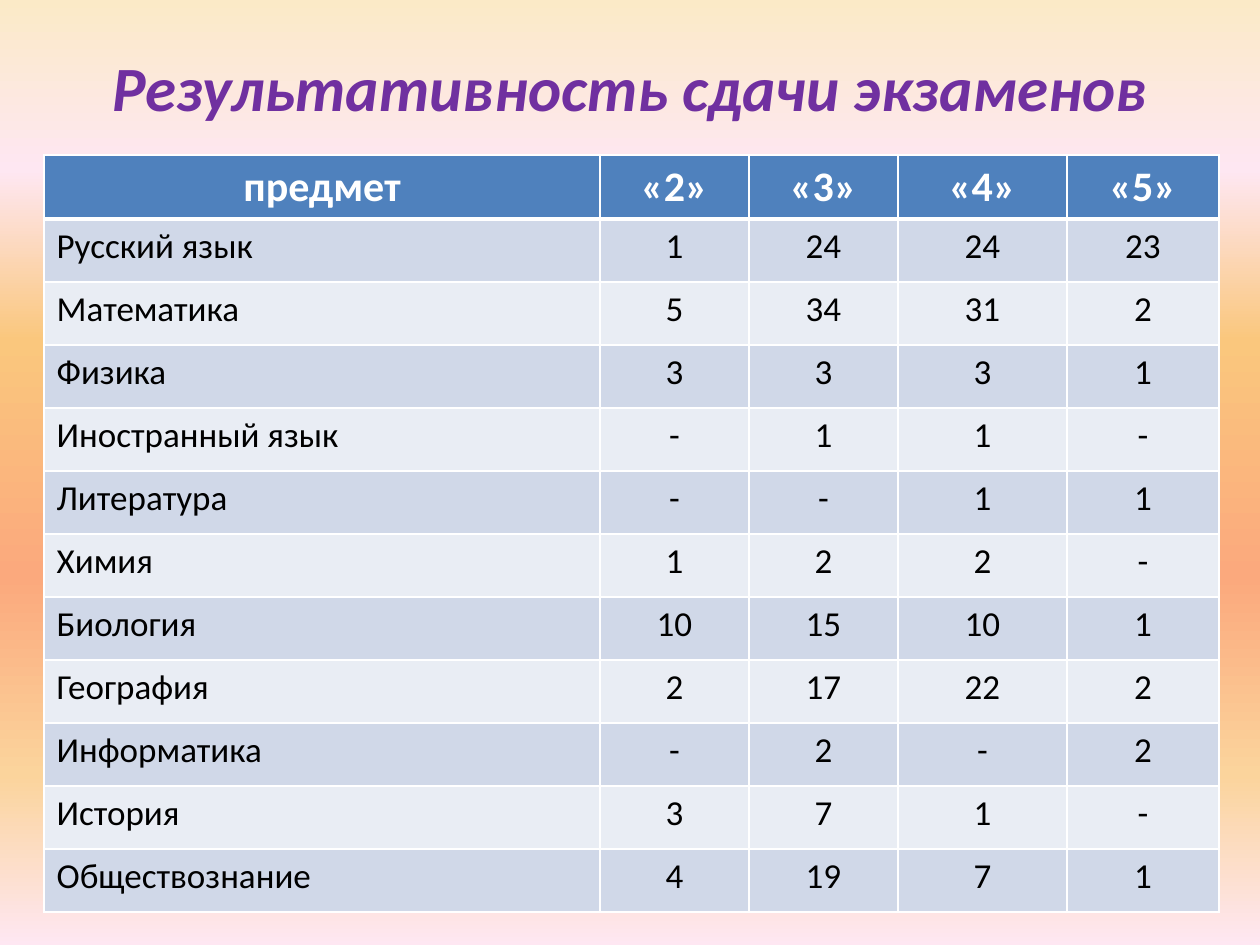
"""Build a slide with a table of exam results by subject."""
from lxml.etree import SubElement
from pptx import Presentation
from pptx.dml.color import RGBColor
from pptx.enum.text import MSO_ANCHOR as Anchor, PP_ALIGN as Align
from pptx.oxml.ns import qn
from pptx.util import Emu, Pt

PURPLE = RGBColor(0x70, 0x30, 0xA0)
WHITE = RGBColor(0xFF, 0xFF, 0xFF)
BLACK = RGBColor(0x00, 0x00, 0x00)
HEADER_BLUE = RGBColor(0x4F, 0x81, 0xBD)
BANDS = [RGBColor(0xD0, 0xD8, 0xE8), RGBColor(0xE9, 0xED, 0xF4)]
CREAM = RGBColor(0xFB, 0xEA, 0xC7)
PINK = RGBColor(0xFE, 0xE7, 0xF2)
AMBER = RGBColor(0xFA, 0xC7, 0x7D)
CORAL = RGBColor(0xFB, 0xA9, 0x7D)
SAND = RGBColor(0xFB, 0xD4, 0x9C)
GRADIENT = [(0, CREAM), (18, PINK), (36, AMBER), (61, CORAL), (82, SAND), (100, PINK)]
FONT = "Calibri"
ROW_HEIGHT = 63
COLUMN_WIDTHS = [556, 149, 149, 169, 152]
RESULTS = [
    ("предмет", "«2»", "«3»", "«4»", "«5»"),
    ("Русский язык", "1", "24", "24", "23"),
    ("Математика", "5", "34", "31", "2"),
    ("Физика", "3", "3", "3", "1"),
    ("Иностранный язык", "-", "1", "1", "-"),
    ("Литература", "-", "-", "1", "1"),
    ("Химия", "1", "2", "2", "-"),
    ("Биология", "10", "15", "10", "1"),
    ("География", "2", "17", "22", "2"),
    ("Информатика", "-", "2", "-", "2"),
    ("История", "3", "7", "1", "-"),
    ("Обществознание", "4", "19", "7", "1"),
]


def px(length):
    return Emu(round(length * 914400 / 126))


def add_run(paragraph, text, size, color, bold, italic=False):
    run = paragraph.add_run()
    run.text = text
    run.font.name = FONT
    run.font.size = Pt(size)
    run.font.bold = bold
    run.font.italic = italic
    run.font.color.rgb = color


presentation = Presentation()
presentation.slide_width, presentation.slide_height = px(1260), px(945)
slide = presentation.slides.add_slide(presentation.slide_layouts[5])

background = slide.background.fill
background.gradient()
background.gradient_angle = 270
stop_list = next(slide.element.iter(qn("a:gsLst")))
for stop in list(stop_list):
    stop_list.remove(stop)
for position, color in GRADIENT:
    stop = SubElement(stop_list, qn("a:gs"), pos=str(position * 1000))
    SubElement(stop, qn("a:srgbClr"), val=str(color))

title = slide.shapes.title
title.left, title.top, title.width, title.height = px(63), px(38), px(1134), px(97)
title.text_frame.vertical_anchor = Anchor.MIDDLE
heading = title.text_frame.paragraphs[0]
heading.alignment = Align.CENTER
add_run(heading, "Результативность сдачи экзаменов", 36, PURPLE, True, True)

table = slide.shapes.add_table(
    len(RESULTS), len(COLUMN_WIDTHS), px(44), px(155),
    px(sum(COLUMN_WIDTHS)), px(ROW_HEIGHT * len(RESULTS)),
).table
for column, width in zip(table.columns, COLUMN_WIDTHS):
    column.width = px(width)

for row_index, values in enumerate(RESULTS):
    table.rows[row_index].height = px(ROW_HEIGHT)
    is_header = row_index == 0
    for column_index, value in enumerate(values):
        cell = table.cell(row_index, column_index)
        properties = cell._tc.get_or_add_tcPr()
        for side in ("lnL", "lnR", "lnT", "lnB"):
            is_thick = (row_index, side) in ((0, "lnB"), (1, "lnT"))
            border = SubElement(properties, qn(f"a:{side}"), w=str(Pt(3 if is_thick else 1)))
            SubElement(SubElement(border, qn("a:solidFill")), qn("a:srgbClr"), val=str(WHITE))
        cell.fill.solid()
        cell.fill.fore_color.rgb = HEADER_BLUE if is_header else BANDS[(row_index - 1) % 2]
        paragraph = cell.text_frame.paragraphs[0]
        paragraph.alignment = Align.CENTER if is_header or column_index else Align.LEFT
        add_run(paragraph, value, 24 if is_header else 20, WHITE if is_header else BLACK, is_header)

presentation.save("out.pptx")
